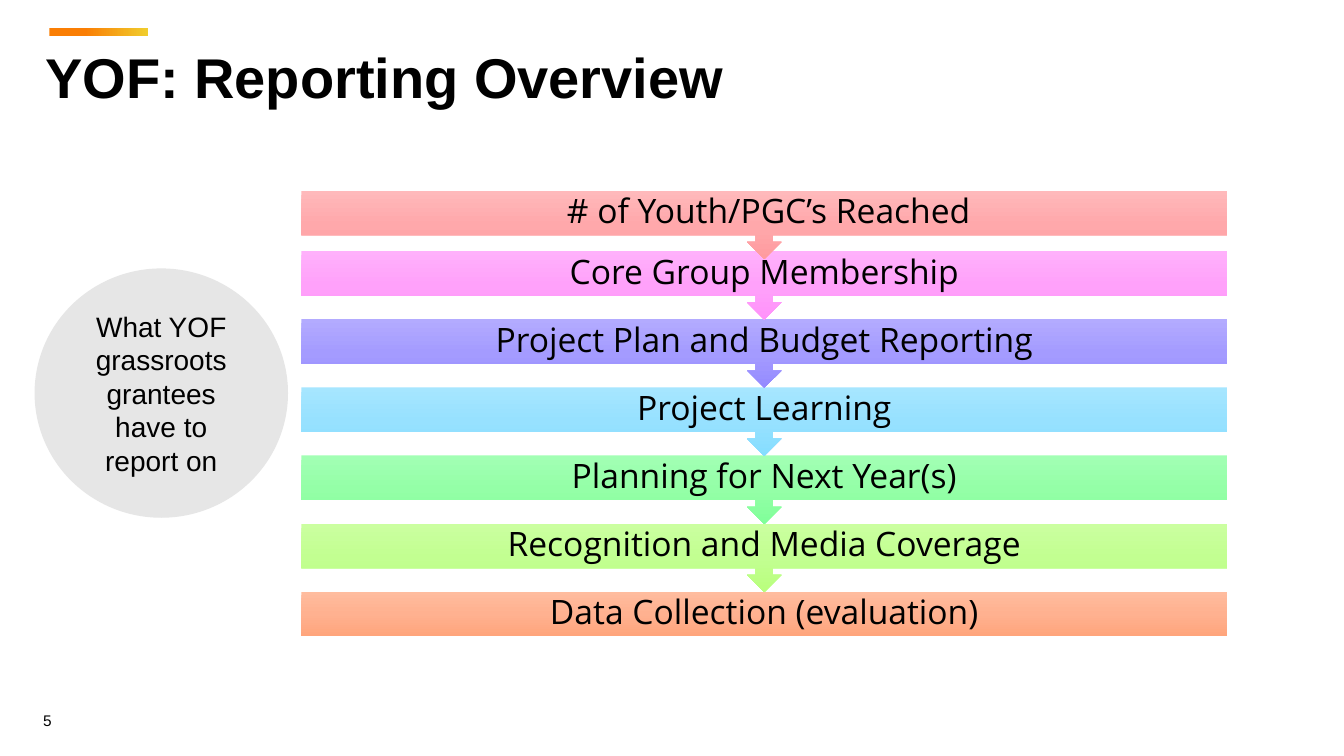
"""Build the reporting overview slide with its chain of report topics."""
from dataclasses import dataclass

from lxml import etree
from pptx import Presentation
from pptx.dml.color import RGBColor
from pptx.enum.shapes import MSO_SHAPE
from pptx.enum.text import MSO_ANCHOR, PP_ALIGN
from pptx.oxml.ns import qn
from pptx.shapes.autoshape import Shape
from pptx.slide import Slide
from pptx.util import Inches, Pt

RECTANGLE = MSO_SHAPE.RECTANGLE
OVAL = MSO_SHAPE.OVAL
CALLOUT = MSO_SHAPE.UP_ARROW_CALLOUT
MIDDLE = MSO_ANCHOR.MIDDLE
CENTER = PP_ALIGN.CENTER
LEFT = PP_ALIGN.LEFT

BLACK = RGBColor(0x00, 0x00, 0x00)
GREY = RGBColor(0xE6, 0xE6, 0xE6)
ORANGE = RGBColor(0xFA, 0x7E, 0x04)
YELLOW = RGBColor(0xF0, 0xCD, 0x2D)
RED_SHADES = (RGBColor(0xFF, 0xB9, 0xBB), RGBColor(0xFF, 0xA8, 0xAB), RGBColor(0xFF, 0x9B, 0x9F))
PINK_SHADES = (RGBColor(0xFF, 0xB1, 0xFB), RGBColor(0xFF, 0xA1, 0xFA), RGBColor(0xFF, 0x92, 0xFA))
VIOLET_SHADES = (RGBColor(0xB3, 0xAB, 0xFF), RGBColor(0xA4, 0x9B, 0xFF), RGBColor(0x95, 0x8B, 0xFF))
BLUE_SHADES = (RGBColor(0xA6, 0xE6, 0xFF), RGBColor(0x97, 0xE1, 0xFF), RGBColor(0x85, 0xDD, 0xFF))
GREEN_SHADES = (RGBColor(0xA2, 0xFF, 0xB4), RGBColor(0x94, 0xFF, 0xA7), RGBColor(0x80, 0xFF, 0x99))
LIME_SHADES = (RGBColor(0xCB, 0xFF, 0xA0), RGBColor(0xC2, 0xFF, 0x91), RGBColor(0xB9, 0xFF, 0x7D))
PEACH_SHADES = (RGBColor(0xFF, 0xBC, 0x9E), RGBColor(0xFF, 0xB1, 0x90), RGBColor(0xFF, 0xA5, 0x7C))

BAR_LEFT, BAR_WIDTH, BAR_HEIGHT, CALLOUT_HEIGHT = 2.99, 9.18, 0.44, 0.68
FIRST_TOP, SECOND_TOP, LAST_TOP = 1.89, 2.49, 5.87


@dataclass(frozen=True)
class Box:
    left: float
    top: float
    width: float
    height: float


@dataclass(frozen=True)
class Topic:
    text: str
    shades: tuple[RGBColor, RGBColor, RGBColor]


TOPICS = (
    Topic(" # of Youth/PGC’s Reached", RED_SHADES),
    Topic("Core Group Membership", PINK_SHADES),
    Topic("Project Plan and Budget Reporting", VIOLET_SHADES),
    Topic("Project Learning", BLUE_SHADES),
    Topic("Planning for Next Year(s)", GREEN_SHADES),
    Topic("Recognition and Media Coverage", LIME_SHADES),
    Topic("Data Collection (evaluation)", PEACH_SHADES),
)


def add_shape(slide: Slide, kind: MSO_SHAPE, box: Box) -> Shape:
    shape = slide.shapes.add_shape(
        kind, Inches(box.left), Inches(box.top), Inches(box.width), Inches(box.height))
    shape.shadow.inherit = False
    shape.line.fill.background()
    return shape


def fill_gradient(shape: Shape, stops: list[tuple[int, RGBColor]], angle: int) -> None:
    shape.fill.gradient()
    gradient = shape.element.spPr.find(qn("a:gradFill"))
    gradient.set("rotWithShape", "0")
    stop_list = gradient.find(qn("a:gsLst"))
    for old_stop in list(stop_list):
        stop_list.remove(old_stop)
    for percent, color in stops:
        stop = etree.SubElement(stop_list, qn("a:gs"), pos=str(percent * 1000))
        etree.SubElement(stop, qn("a:srgbClr"), val=str(color))
    direction = gradient.find(qn("a:lin"))
    direction.set("ang", str(angle * 60000))
    direction.set("scaled", "0")


def write_text(shape: Shape, text: str, size: int, font_name: str = "Arial",
               alignment: PP_ALIGN = CENTER, bold: bool = False) -> None:
    frame = shape.text_frame
    frame.word_wrap = True
    frame.vertical_anchor = MIDDLE
    paragraph = frame.paragraphs[0]
    paragraph.text = text
    paragraph.alignment = alignment
    paragraph.font.name = font_name
    paragraph.font.size = Pt(size)
    paragraph.font.bold = bold
    paragraph.font.color.rgb = BLACK


def add_text_box(slide: Slide, box: Box) -> Shape:
    return slide.shapes.add_textbox(
        Inches(box.left), Inches(box.top), Inches(box.width), Inches(box.height))


def add_topic(slide: Slide, topic: Topic, top: float, is_last: bool) -> None:
    bar_box = Box(BAR_LEFT, top, BAR_WIDTH, BAR_HEIGHT)
    if is_last:
        bar = add_shape(slide, RECTANGLE, bar_box)
    else:
        bar = add_shape(slide, CALLOUT, Box(BAR_LEFT, top, BAR_WIDTH, CALLOUT_HEIGHT))
        bar.rotation = 180
    fill_gradient(bar, list(zip((0, 50, 100), topic.shades)), 90)

    label = add_text_box(slide, bar_box)
    write_text(label, topic.text, 24, "Open Sans")
    frame = label.text_frame
    frame.margin_left = frame.margin_right = Inches(0.19)
    frame.margin_top = frame.margin_bottom = Inches(0.19)
    frame.paragraphs[0].line_spacing = 0.9


def main() -> None:
    presentation = Presentation()
    presentation.slide_width = Inches(13.33)
    presentation.slide_height = Inches(7.5)
    slide = presentation.slides.add_slide(presentation.slide_layouts[6])

    write_text(add_text_box(slide, Box(0.18, 7, 0.58, 0.3)), "5", 11)
    accent = add_shape(slide, RECTANGLE, Box(0.49, 0.28, 0.98, 0.08))
    fill_gradient(accent, [(36, ORANGE), (100, YELLOW)], 0)
    title = add_text_box(slide, Box(0.35, 0.37, 12.52, 0.77))
    write_text(title, "YOF: Reporting Overview", 40, alignment=LEFT, bold=True)

    pitch = (LAST_TOP - SECOND_TOP) / (len(TOPICS) - 2)
    tops = [FIRST_TOP] + [SECOND_TOP + pitch * row for row in range(len(TOPICS) - 1)]
    for topic, top in reversed(list(zip(TOPICS, tops))):
        add_topic(slide, topic, top, topic is TOPICS[-1])

    circle = add_shape(slide, OVAL, Box(0.35, 2.67, 2.5, 2.46))
    circle.fill.solid()
    circle.fill.fore_color.rgb = GREY
    circle.line.color.rgb = GREY
    circle.line.width = Pt(1)
    write_text(circle, "What YOF grassroots grantees have to report on", 20)

    presentation.save("out.pptx")


if __name__ == "__main__":
    main()
